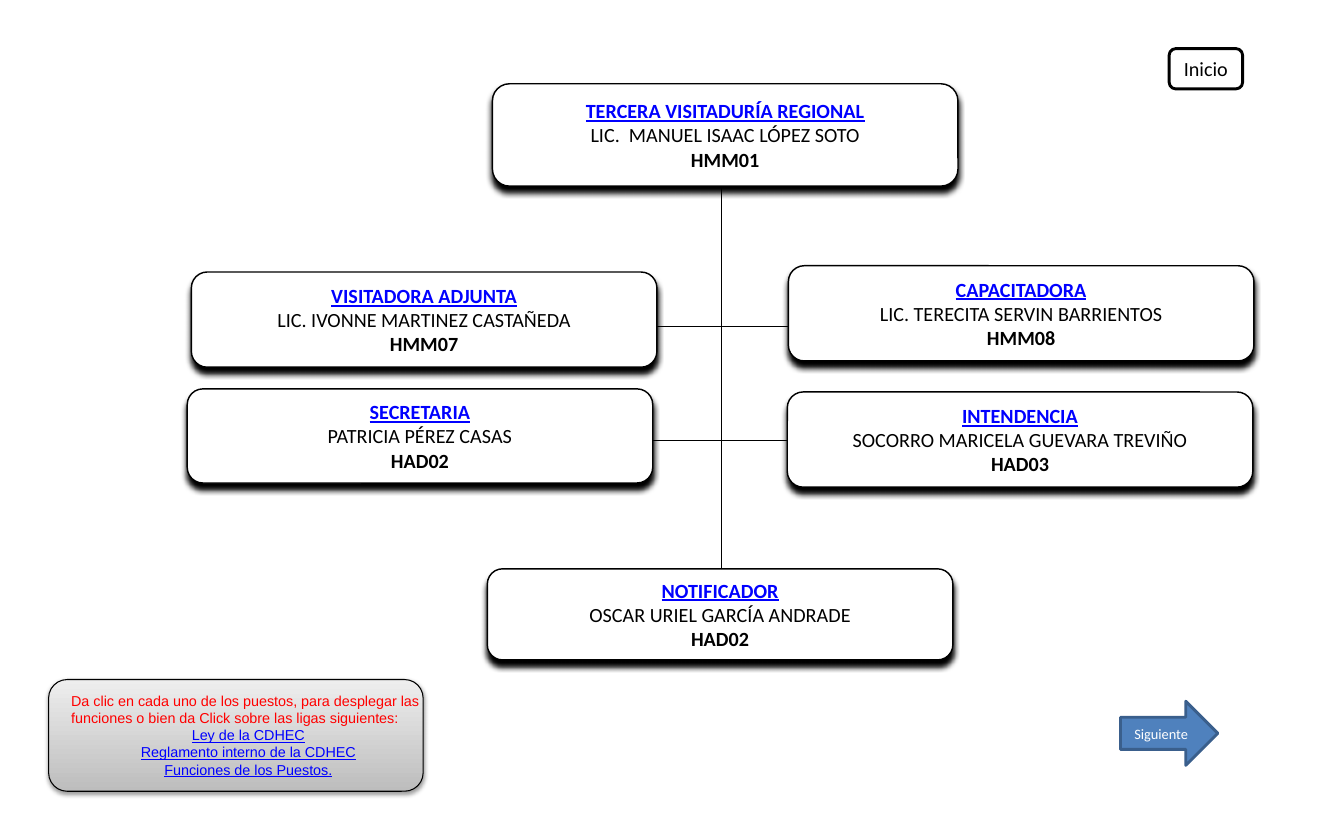
from lxml import etree
from pptx import Presentation
from pptx import util as u
from pptx.dml.color import RGBColor
from pptx.enum import shapes, text
from pptx.oxml import ns

BLACK = RGBColor(0x00, 0x00, 0x00)
WHITE = RGBColor(0xFF, 0xFF, 0xFF)
BLUE = RGBColor(0x00, 0x00, 0xFF)
RED = RGBColor(0xFF, 0x00, 0x00)
STEEL = RGBColor(0x4F, 0x81, 0xBD)
NAVY = RGBColor(0x3A, 0x5F, 0x8C)
GREY = RGBColor(0xBD, 0xBD, 0xBD)
PALE = RGBColor(0xEE, 0xEE, 0xEE)

deck = Presentation()
deck.slide_width, deck.slide_height = u.Inches(12.99), u.Inches(7.88)
COL, ROW = deck.slide_width / 100, deck.slide_height / 100
page = deck.slides.add_slide(deck.slide_layouts[6])
kinds = shapes.MSO_SHAPE
LEFT, MID = text.PP_ALIGN.LEFT, text.PP_ALIGN.CENTER


def draw(kind, spot, fill, edge, width, cast=None):
    """Add a shape at a spot in percent; cast is shadow blur, distance, opacity."""
    x, y, w, h = spot
    item = page.shapes.add_shape(kind, int(x * COL), int(y * ROW), int(w * COL), int(h * ROW))
    item.fill.solid()
    item.fill.fore_color.rgb = fill
    item.line.color.rgb = edge
    item.line.width = u.Pt(width)
    item.shadow.inherit = False
    if cast:
        blur, dist, alpha = cast
        list_ = item._element.spPr.find(ns.qn("a:effectLst"))
        shade = etree.SubElement(list_, ns.qn("a:outerShdw"), blurRad=str(u.Pt(blur)),
                                 dist=str(u.Pt(dist)), dir="5400000", algn="ctr", rotWithShape="0")
        tint = etree.SubElement(shade, ns.qn("a:srgbClr"), val=str(BLACK))
        etree.SubElement(tint, ns.qn("a:alpha"), val=str(alpha * 1000))
    return item


def write(item, lines, size, face="Calibri", frame={}):
    """Fill a shape with lines of (words, alignment, colour, bold, underline)."""
    body = item.text_frame
    for key, value in ({"word_wrap": True, "vertical_anchor": text.MSO_ANCHOR.MIDDLE} | frame).items():
        setattr(body, key, value)
    for n, (words, align, color, bold, under) in enumerate(lines):
        para = body.add_paragraph() if n else body.paragraphs[0]
        para.alignment = align
        run = para.add_run()
        run.text = words
        run.font.color.rgb = color
        style = {"name": face, "size": u.Pt(size), "bold": bold, "underline": under}
        for key, value in style.items():
            setattr(run.font, key, value)


# Trunk and branches of the chart
TRUNK, HIGH, LOW, ARM = 53.66, 40.1, 54.06, 8.47
wires = [
    (TRUNK, 22.21, TRUNK, 69.8),
    (TRUNK - ARM, HIGH, TRUNK, HIGH),
    (TRUNK, HIGH, TRUNK + ARM, HIGH),
    (48.58, LOW, TRUNK, LOW),
    (51.73, LOW, 51.73 + ARM, LOW),
]
for x1, y1, x2, y2 in wires:
    wire = page.shapes.add_connector(shapes.MSO_CONNECTOR.STRAIGHT, int(x1 * COL), int(y1 * ROW),
                                     int(x2 * COL), int(y2 * ROW))
    wire.line.color.rgb = BLACK
    wire.line.width = u.Pt(0.75)
    etree.SubElement(wire._element.spPr, ns.qn("a:effectLst"))

# Posts
WIDE = 34.64
posts = [
    (36.64, 10.28, 12.56, "TERCERA VISITADURÍA REGIONAL", "LIC.  MANUEL ISAAC LÓPEZ SOTO", "HMM01"),
    (14.24, 33.38, 11.68, "VISITADORA ADJUNTA", "LIC. IVONNE MARTINEZ CASTAÑEDA", "HMM07"),
    (13.93, 47.72, 11.55, "SECRETARIA", "PATRICIA PÉREZ CASAS", "HAD02"),
    (58.58, 48.1, 11.68, "INTENDENCIA", "SOCORRO MARICELA GUEVARA TREVIÑO", "HAD03"),
    (58.66, 32.61, 11.68, "CAPACITADORA", "LIC. TERECITA SERVIN BARRIENTOS", "HMM08"),
    (36.26, 69.8, 11.17, "NOTIFICADOR", "OSCAR URIEL GARCÍA ANDRADE", "HAD02"),
]
pad = {"word_wrap": False, "margin_left": u.Inches(0.17), "margin_right": u.Inches(0.17),
       "margin_top": u.Inches(0.09), "margin_bottom": u.Inches(0.09)}
for x, y, h, role, name, code in posts:
    box = draw(kinds.ROUNDED_RECTANGLE, (x, y, WIDE, h), WHITE, BLACK, 1, (4, 4, 100))
    write(box, [(role, MID, BLUE, True, True), (name, MID, BLACK, False, False),
                (code, MID, BLACK, True, False)], 14, frame=pad)

# Buttons
home = draw(kinds.ROUNDED_RECTANGLE, (86.99, 5.96, 5.47, 4.95), WHITE, BLACK, 2)
write(home, [("Inicio", MID, BLACK, False, False)], 14)
onward = draw(kinds.RIGHT_ARROW, (83.37, 86.04, 7.24, 7.87), STEEL, NAVY, 2)
write(onward, [("Siguiente", MID, WHITE, False, False)], 10)

# Hint panel
panel = draw(kinds.ROUNDED_RECTANGLE, (3.62, 83.38, 27.87, 13.71), WHITE, BLACK, 0.75, (3.1, 1.6, 38))
panel.fill.gradient()
panel.fill.gradient_angle = 90
for stop, color, place in zip(panel.fill.gradient_stops, (GREY, PALE), (0, 1)):
    stop.color.rgb = color
    stop.position = place
hint = page.shapes.add_textbox(int(4.54 * COL), int(84.26 * ROW), int(27.87 * COL), int(11.93 * ROW))
links = ["Ley de la CDHEC", "Reglamento interno de la CDHEC", "Funciones de los Puestos."]
guide = ("Da clic en cada uno de los puestos, para desplegar las funciones "
         "o bien da Click sobre las ligas siguientes:")
write(hint, [(guide, LEFT, RED, False, False)] + [(link, MID, BLUE, False, True) for link in links],
      10, "Arial", {"vertical_anchor": text.MSO_ANCHOR.TOP})

deck.save("out.pptx")
